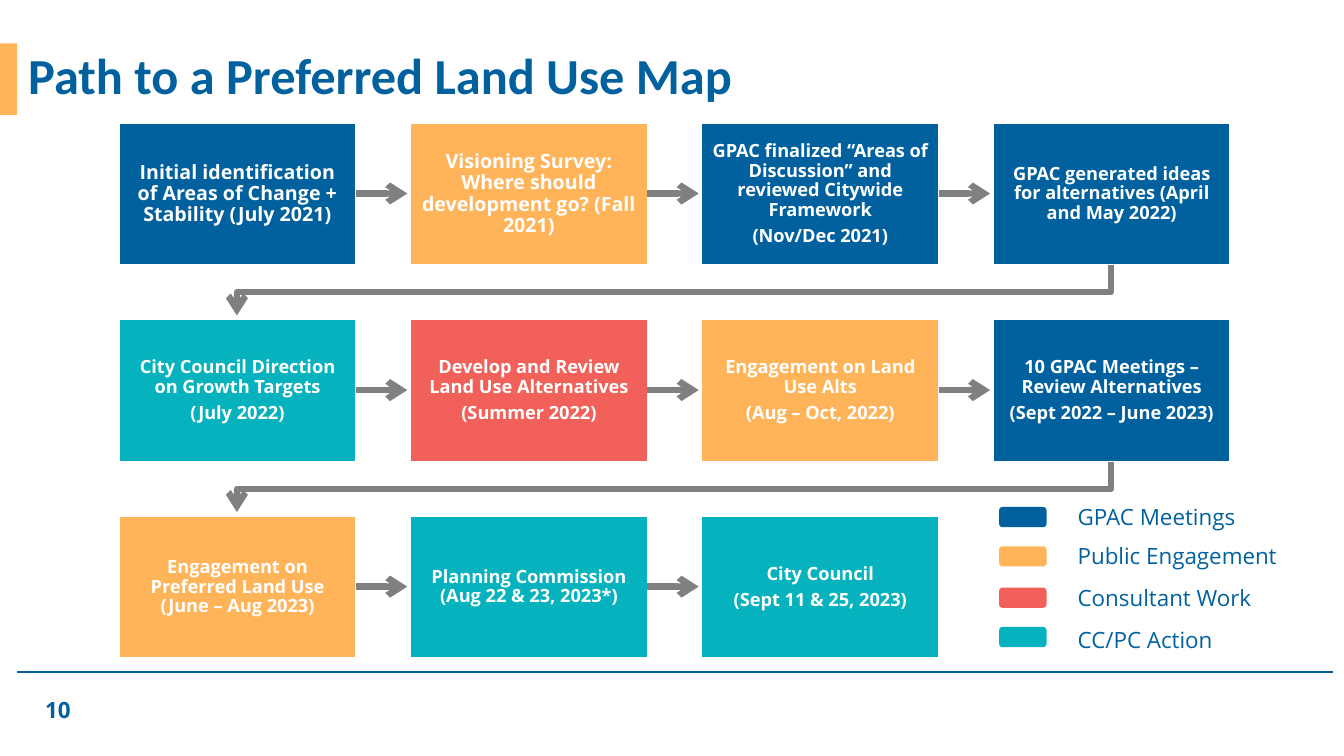
from lxml.etree import SubElement
from pptx import Presentation
from pptx.dml.color import RGBColor
from pptx.enum.shapes import MSO_CONNECTOR, MSO_SHAPE
from pptx.enum.text import MSO_ANCHOR, MSO_AUTO_SIZE, PP_ALIGN
from pptx.oxml.ns import qn
from pptx.util import Pt

PX = 9144  # 100 px to the inch
COLORS = {
    "gpac": "00619E",
    "public": "FFB45A",
    "consultant": "F26159",
    "council": "05B2BD",
    "arrow": "808080",
    "white": "FFFFFF",
}
BOX_W, BOX_H = 235, 141
LEFT, TOP, COLUMN_STEP, ROW_STEP = 118, 122, 289, 195

# Each step: kind of work, text size, paragraphs
STEPS = [
    [
        ("gpac", 14, "Initial identification of Areas of Change + Stability (July 2021)"),
        ("public", 14, "Visioning Survey: Where should development go? (Fall 2021)"),
        ("gpac", 13, "GPAC finalized “Areas of Discussion” and reviewed Citywide Framework\n(Nov/Dec 2021)"),
        ("gpac", 13, "GPAC generated ideas for alternatives (April and May 2022)"),
    ],
    [
        ("council", 13, "City Council Direction on Growth Targets\n(July 2022)"),
        ("consultant", 13, "Develop and Review Land Use Alternatives\n(Summer 2022)"),
        ("public", 13, "Engagement on Land Use Alts\n(Aug – Oct, 2022)"),
        ("gpac", 13, "10 GPAC Meetings – Review Alternatives\n(Sept 2022 – June 2023)"),
    ],
    [
        ("public", 13, "Engagement on Preferred Land Use (June – Aug 2023)"),
        ("council", 13, "Planning Commission (Aug 22 & 23, 2023*)"),
        ("council", 13, "City Council\n(Sept 11 & 25, 2023)"),
    ],
]
# Each entry: kind of work, label, swatch top, label top
LEGEND = [
    ("gpac", "GPAC Meetings", 503, 494),
    ("public", "Public Engagement", 542, 533),
    ("consultant", "Consultant Work", 583, 575),
    ("council", "CC/PC Action", 622, 616),
]


def style_text(frame, size, color, font="Open Sans", bold=False):
    for paragraph in frame.paragraphs:
        for run in paragraph.runs:
            run.font.name = font
            run.font.size = Pt(size)
            run.font.bold = bold
            run.font.color.rgb = RGBColor.from_string(COLORS[color])


def style_line(line_shape, color, width, arrow=False):
    line_shape.line.color.rgb = RGBColor.from_string(COLORS[color])
    line_shape.line.width = Pt(width)
    properties = line_shape.element.spPr
    if arrow:
        SubElement(properties.find(qn("a:ln")), qn("a:tailEnd"), type="arrow")
    SubElement(properties, qn("a:effectLst"))


prs = Presentation()
prs.slide_width, prs.slide_height = 1333 * PX, 750 * PX
slide = prs.slides.add_slide(prs.slide_layouts[5])
shapes = slide.shapes

footer_rule = shapes.add_connector(MSO_CONNECTOR.STRAIGHT, 17 * PX, 667 * PX, 1322 * PX, 667 * PX)
style_line(footer_rule, "gpac", 1.5)

title_accent = shapes.add_shape(MSO_SHAPE.RECTANGLE, 0, 43 * PX, 17 * PX, 71 * PX)
title_accent.shadow.inherit = False
title_accent.fill.solid()
title_accent.fill.fore_color.rgb = RGBColor.from_string(COLORS["public"])
title_accent.line.fill.background()

title = shapes.title
title.left, title.top, title.width, title.height = 18 * PX, 52 * PX, 1280 * PX, 52 * PX
title.text_frame.text = "Path to a Preferred Land Use Map"
title.text_frame.auto_size = MSO_AUTO_SIZE.NONE
title.text_frame.vertical_anchor = MSO_ANCHOR.MIDDLE
title.text_frame.paragraphs[0].alignment = PP_ALIGN.LEFT
title.text_frame.paragraphs[0].line_spacing = 0.9
style_text(title.text_frame, 36, "gpac", font="Calibri", bold=True)

for row, row_steps in enumerate(STEPS):
    y = TOP + row * ROW_STEP
    for column, (kind, size, wording) in enumerate(row_steps):
        x = LEFT + column * COLUMN_STEP
        step = shapes.add_shape(MSO_SHAPE.RECTANGLE, x * PX, y * PX, BOX_W * PX, BOX_H * PX)
        step.shadow.inherit = False
        step.fill.solid()
        step.fill.fore_color.rgb = RGBColor.from_string(COLORS[kind])
        step.line.color.rgb = RGBColor.from_string(COLORS["white"])
        step.line.width = Pt(1)
        frame = step.text_frame
        frame.text = wording
        frame.word_wrap = True
        frame.vertical_anchor = MSO_ANCHOR.MIDDLE
        frame.margin_left = frame.margin_right = 10 * PX
        frame.margin_top = frame.margin_bottom = 10 * PX
        for paragraph in frame.paragraphs:
            paragraph.alignment = PP_ALIGN.CENTER
            paragraph.line_spacing = 0.9
            paragraph.space_after = Pt(size * 0.35)
        style_text(frame, size, "white", bold=True)

        if column < len(row_steps) - 1:
            right, middle = x + BOX_W, y + BOX_H // 2
            next_arrow = shapes.add_connector(
                MSO_CONNECTOR.STRAIGHT, right * PX, middle * PX, (right + 51) * PX, middle * PX
            )
            style_line(next_arrow, "arrow", 4.5, arrow=True)

    if row < len(STEPS) - 1:
        bottom = y + BOX_H
        first_center = LEFT + BOX_W // 2
        last_center = first_center + 3 * COLUMN_STEP
        route = shapes.build_freeform(last_center, bottom, scale=PX)
        route.add_line_segments(
            [(last_center, bottom + 27), (first_center, bottom + 27), (first_center, bottom + 50)],
            close=False,
        )
        row_arrow = route.convert_to_shape()
        row_arrow.fill.background()
        style_line(row_arrow, "arrow", 4.5, arrow=True)

for kind, label, swatch_top, label_top in LEGEND:
    swatch = shapes.add_shape(MSO_SHAPE.ROUNDED_RECTANGLE, 991 * PX, swatch_top * PX, 47 * PX, 20 * PX)
    swatch.shadow.inherit = False
    swatch.fill.solid()
    swatch.fill.fore_color.rgb = RGBColor.from_string(COLORS[kind])
    swatch.line.fill.background()
    caption = shapes.add_textbox(1059 * PX, label_top * PX, 247 * PX, 37 * PX).text_frame
    caption.word_wrap = True
    caption.text = label
    style_text(caption, 16, "gpac")

page_number = shapes.add_textbox(35 * PX, 686 * PX, 46 * PX, 37 * PX).text_frame
page_number.text = "10"
style_text(page_number, 16, "gpac", bold=True)

prs.save("out.pptx")
